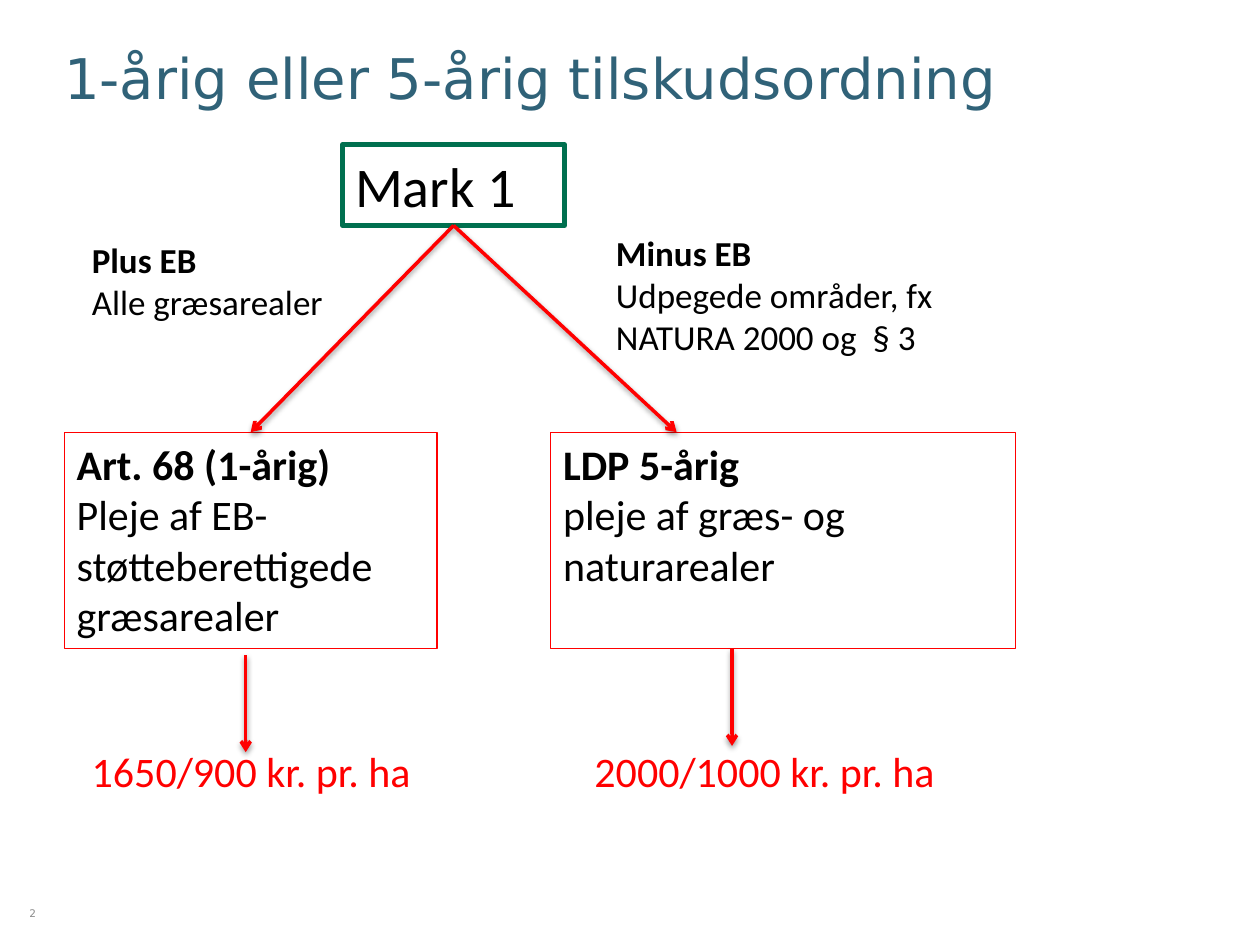
from lxml import etree
from pptx import Presentation
from pptx.dml.color import RGBColor
from pptx.enum.shapes import MSO_CONNECTOR, MSO_SHAPE
from pptx.enum.text import MSO_ANCHOR, PP_ALIGN
from pptx.oxml import parse_xml
from pptx.oxml.ns import qn
from pptx.util import Inches, Pt

RECTANGLE = MSO_SHAPE.RECTANGLE
STRAIGHT = MSO_CONNECTOR.STRAIGHT
TOP, MIDDLE, BOTTOM = MSO_ANCHOR.TOP, MSO_ANCHOR.MIDDLE, MSO_ANCHOR.BOTTOM
LEFT, CENTER = PP_ALIGN.LEFT, PP_ALIGN.CENTER
TOP_SIDE, BOTTOM_SIDE = 0, 2

COLORS = {
    "title": "306278",
    "green": "00704F",
    "red": "FF0000",
    "black": "000000",
    "grey": "8C8C8C",
}
SHADOW = (
    '<a:effectLst xmlns:a="http://schemas.openxmlformats.org/drawingml/2006/main">'
    '<a:outerShdw blurRad="40000" dist="20000" dir="5400000" rotWithShape="0">'
    '<a:srgbClr val="000000"><a:alpha val="38000"/></a:srgbClr>'
    "</a:outerShdw></a:effectLst>"
)

deck = Presentation()
deck.slide_width, deck.slide_height = Inches(10), Inches(7.5)
page = deck.slides.add_slide(deck.slide_layouts[6])


def add_text(place, lines, size, color="black", font="Calibri", border=None,
             anchor=TOP, align=LEFT, inset=True):
    place = [Inches(value) for value in place]
    if border:
        box = page.shapes.add_shape(RECTANGLE, *place)
        box.shadow.inherit = False
        box.fill.background()
        box.line.color.rgb = RGBColor.from_string(COLORS[border[0]])
        box.line.width = Pt(border[1])
    else:
        box = page.shapes.add_textbox(*place)
    frame = box.text_frame
    frame.word_wrap = True
    frame.vertical_anchor = anchor
    if not inset:
        frame.margin_left = frame.margin_right = 0
        frame.margin_top = frame.margin_bottom = 0
    for index, line in enumerate(lines):
        para = frame.paragraphs[0] if index == 0 else frame.add_paragraph()
        para.text = line
        para.alignment = align
        para.font.name = font
        para.font.size = Pt(size)
        para.font.bold = len(lines) > 1 and index == 0
        para.font.color.rgb = RGBColor.from_string(COLORS[color])
    return box


def add_arrow(start, end):
    points = [Inches(value) for value in (*start, *end)]
    arrow = page.shapes.add_connector(STRAIGHT, *points)
    arrow.line.color.rgb = RGBColor.from_string(COLORS["red"])
    arrow.line.width = Pt(2)
    etree.SubElement(arrow.line._get_or_add_ln(), qn("a:tailEnd"), type="arrow")
    arrow._element.spPr.append(parse_xml(SHADOW))
    return arrow


title = add_text((0.51, 0.26, 8.97, 0.63), ["1-årig eller 5-årig tilskudsordning"], 32,
                 "title", "DejaVu Sans", anchor=BOTTOM, inset=False)
title.text_frame.paragraphs[0].line_spacing = 0.9

field = add_text((2.72, 1.15, 1.76, 0.64), ["Mark 1"], 32, border=("green", 3))
one_year = add_text((0.51, 3.43, 2.96, 1.72),
                    ["Art. 68 (1-årig)", "Pleje af EB- støtteberettigede græsarealer"],
                    24, border=("red", 0.75))
five_year = add_text((4.37, 3.43, 3.69, 1.72),
                     ["LDP 5-årig", "pleje af græs- og naturarealer"],
                     24, border=("red", 0.75))

to_one_year = add_arrow((3.6, 1.79), (1.99, 3.43))
to_five_year = add_arrow((3.6, 1.79), (5.37, 3.43))
for arrow in (to_one_year, to_five_year):
    arrow.begin_connect(field, BOTTOM_SIDE)
to_one_year.end_connect(one_year, TOP_SIDE)

for x, y in ((1.95, 5.2), (5.81, 5.15)):
    add_arrow((x, y), (x, y + 0.77))

add_text((4.79, 1.79, 3.36, 1.11),
         ["Minus EB", "Udpegede områder, fx NATURA 2000 og  § 3"], 20)
add_text((0.63, 1.84, 2.25, 0.77), ["Plus EB", "Alle græsarealer"], 20)

add_text((0.63, 5.87, 3.03, 0.5), ["1650/900 kr. pr. ha"], 24, "red")
add_text((4.62, 5.87, 3.34, 0.5), ["2000/1000 kr. pr. ha"], 24, "red")

add_text((0, 6.99, 0.52, 0.51), ["2"], 6, "grey", "DejaVu Sans",
         anchor=MIDDLE, align=CENTER, inset=False)

deck.save("out.pptx")
